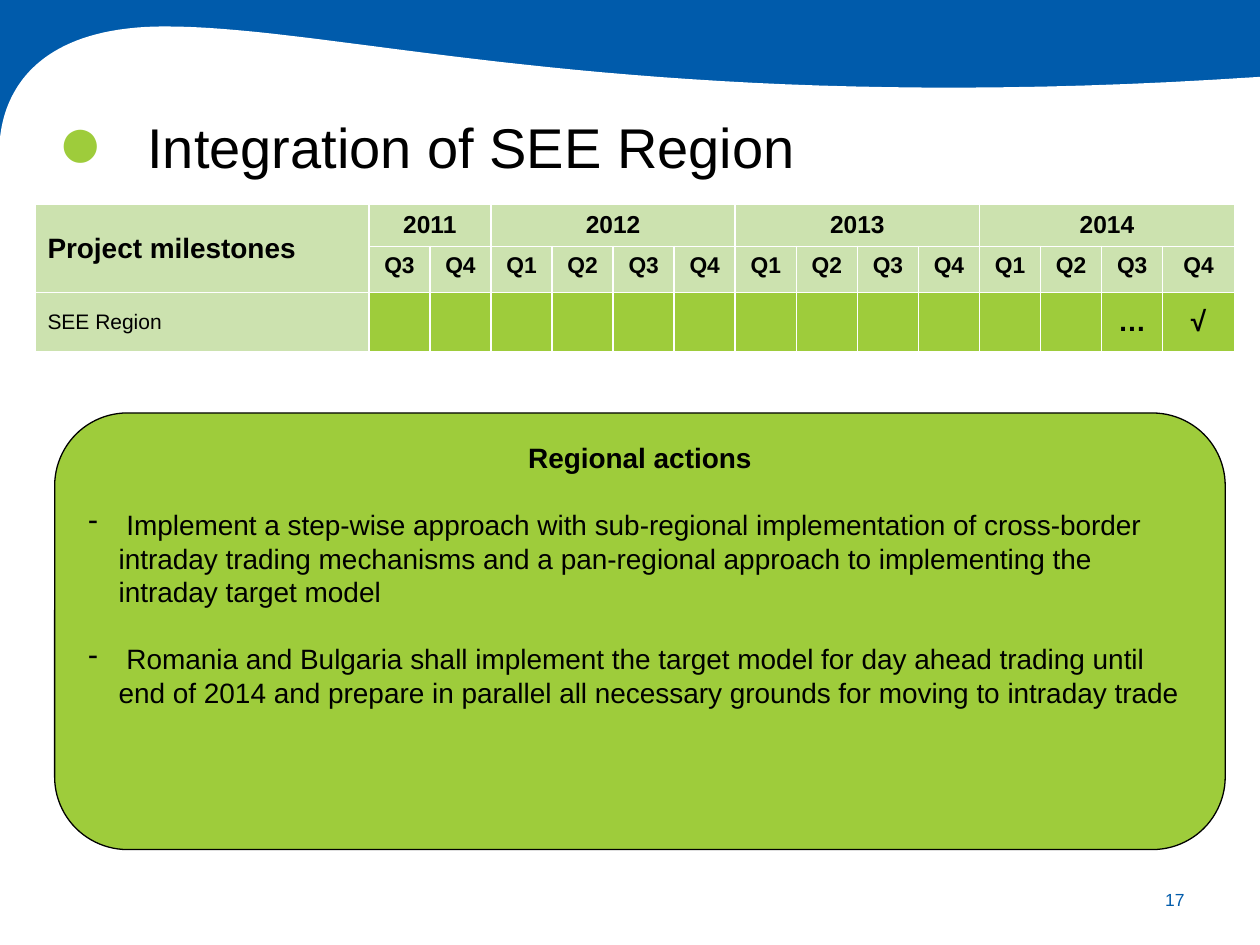
from lxml.etree import SubElement
from pptx import Presentation
from pptx.dml.color import RGBColor
from pptx.enum.shapes import MSO_SHAPE as Shape
from pptx.enum.text import MSO_ANCHOR as Anchor, MSO_AUTO_SIZE as AutoSize, PP_ALIGN as Align
from pptx.oxml.ns import qn
from pptx.util import Inches, Pt

WIDTH, HEIGHT = Inches(10), Inches(7.5)
FONT = "Arial"
COLORS = {"blue": "005BAB", "green": "9ECC3B", "pale": "CCE2AF",
          "white": "FFFFFF", "black": "000000"}
YEARS = {"2011": ["Q3", "Q4"]} | {
    year: ["Q1", "Q2", "Q3", "Q4"] for year in ("2012", "2013", "2014")}
MARKS = {"2014 Q3": "…", "2014 Q4": "√"}
ACTIONS = [
    " Implement a step-wise approach with sub-regional implementation of cross-border "
    "intraday trading mechanisms and a pan-regional approach to implementing the "
    "intraday target model",
    " Romania and Bulgaria shall implement the target model for day ahead trading until "
    "end of 2014 and prepare in parallel all necessary grounds for moving to intraday trade",
]
# Edge of the page, from right to left, in inches
WAVE = [[(10, 0.61), (5.1, 0.94), (2.76, 0.21), (1.31, 0.21)],
        [(1.31, 0.21), (0.23, 0.21), (0.03, 0.79), (0, 1.1)]]


def color(name):
    return RGBColor.from_string(COLORS[name])


def area(left, top, width, height):
    """Turn percentages of the slide's size into a position and size."""
    return [int(share * side / 100) for share, side in
            zip((left, top, width, height), (WIDTH, HEIGHT) * 2)]


def add_run(paragraph, text, size, ink="black", bold=False, align=Align.LEFT):
    paragraph.alignment = align
    run = paragraph.add_run()
    run.text = text
    font = run.font
    font.name, font.size, font.bold = FONT, Pt(size), bold
    font.color.rgb = color(ink)


def paint(shape, fill, line=None):
    shape.shadow.inherit = False
    shape.fill.solid()
    shape.fill.fore_color.rgb = color(fill)
    if line:
        shape.line.color.rgb = color(line)
        shape.line.width = Pt(0.75)
    else:
        shape.line.fill.background()


def bezier(points, steps=40):
    """Sample a cubic curve."""
    for step in range(steps + 1):
        t = step / steps
        weights = ((1 - t) ** 3, 3 * t * (1 - t) ** 2, 3 * t ** 2 * (1 - t), t ** 3)
        yield tuple(Inches(sum(weight * point[axis] for weight, point in zip(weights, points)))
                    for axis in (0, 1))


def add_wave(slide):
    """Draw the blue band and the white page, behind everything else."""
    band = slide.shapes.add_shape(Shape.RECTANGLE, *area(0, 0, 100, 15.33))
    edge = [point for curve in WAVE for point in bezier(curve)]
    builder = slide.shapes.build_freeform(*edge[0], scale=1.0)
    builder.add_line_segments(edge[1:] + [(0, HEIGHT), (WIDTH, HEIGHT)], close=True)
    page = builder.convert_to_shape()
    for shape, fill in ((page, "white"), (band, "blue")):
        paint(shape, fill)
        slide.shapes._spTree.insert(2, shape._element)


def add_label(slide, box, text, size, ink, align, anchor, side_inset=0.1):
    frame = slide.shapes.add_textbox(*area(*box)).text_frame
    frame.word_wrap = True
    frame.vertical_anchor = anchor
    frame.margin_left = frame.margin_right = Inches(side_inset)
    add_run(frame.paragraphs[0], text, size, ink, align=align)


def set_title(slide, text):
    title = slide.shapes.title
    title.left, title.top, title.width, title.height = area(10.7, 11.2, 85.7, 15.2)
    frame = title.text_frame
    frame.auto_size = AutoSize.NONE
    frame.vertical_anchor = Anchor.TOP
    add_run(frame.paragraphs[0], text, 32)


def style_cell(cell, fill):
    properties = cell._tc.get_or_add_tcPr()
    for side in ("a:lnL", "a:lnR", "a:lnT", "a:lnB"):
        border = SubElement(properties, qn(side), w=str(Pt(1)))
        solid = SubElement(border, qn("a:solidFill"))
        SubElement(solid, qn("a:srgbClr"), val=COLORS["white"])
    cell.fill.solid()
    cell.fill.fore_color.rgb = color(fill)


def write_cell(cell, text, size, bold=True, align=Align.CENTER, anchor=Anchor.MIDDLE):
    cell.vertical_anchor = anchor
    add_run(cell.text_frame.paragraphs[0], text, size, bold=bold, align=align)


def add_milestones(slide):
    quarters = [(year, quarter) for year, names in YEARS.items() for quarter in names]
    widths = [2.65] + [0.485] * (len(quarters) - 1) + [0.57]
    heights = [0.33, 0.34, 0.47]
    table = slide.shapes.add_table(len(heights), len(widths),
                                   *area(2.77, 21.63, 95.3, 15.2)).table
    for column, width in zip(table.columns, widths):
        column.width = Inches(width)
    for row, height in zip(table.rows, heights):
        row.height = Inches(height)
    for row in range(len(heights)):
        for column in range(len(widths)):
            style_cell(table.cell(row, column), "green" if row == 2 and column else "pale")

    table.cell(0, 0).merge(table.cell(1, 0))
    write_cell(table.cell(0, 0), "Project milestones", 16, align=Align.LEFT)
    write_cell(table.cell(2, 0), "SEE Region", 12, bold=False, align=Align.LEFT)
    start = 1
    for year, names in YEARS.items():
        table.cell(0, start).merge(table.cell(0, start + len(names) - 1))
        write_cell(table.cell(0, start), year, 14, anchor=Anchor.TOP)
        start += len(names)
    for column, (year, quarter) in enumerate(quarters, 1):
        write_cell(table.cell(1, column), quarter, 13, anchor=Anchor.TOP)
        mark = MARKS.get(f"{year} {quarter}")
        if mark:
            write_cell(table.cell(2, column), mark, 16)


def add_dash(paragraph):
    properties = paragraph._p.get_or_add_pPr()
    indent = Inches(0.24)
    properties.set("marL", str(indent))
    properties.set("indent", str(-indent))
    SubElement(properties, qn("a:buChar"), char="-")


def add_actions(slide):
    panel = slide.shapes.add_shape(Shape.ROUNDED_RECTANGLE, *area(4.34, 43.7, 92.9, 46.2))
    paint(panel, "green", "black")
    frame = panel.text_frame
    frame.word_wrap = True
    frame.vertical_anchor = Anchor.TOP
    line_height = Pt(19.2)
    heading = frame.paragraphs[0]
    heading.line_spacing = line_height
    add_run(heading, "Regional actions", 16, bold=True, align=Align.CENTER)
    for action in ACTIONS:
        paragraph = frame.add_paragraph()
        paragraph.line_spacing = paragraph.space_before = line_height
        add_dash(paragraph)
        add_run(paragraph, action, 16)


def main():
    presentation = Presentation()
    presentation.slide_width, presentation.slide_height = WIDTH, HEIGHT
    slide = presentation.slides.add_slide(presentation.slide_layouts.get_by_name("Title Only"))
    add_wave(slide)
    add_label(slide, (89.4, 92.5, 5.6, 5.3), "17", 10, "blue", Align.RIGHT, Anchor.MIDDLE)
    add_label(slide, (3.65, 7.6, 5.5, 12.5), "●", 44, "green", Align.CENTER, Anchor.BOTTOM,
              side_inset=0)
    set_title(slide, "Integration of SEE Region")
    add_milestones(slide)
    add_actions(slide)
    presentation.save("out.pptx")


if __name__ == "__main__":
    main()
